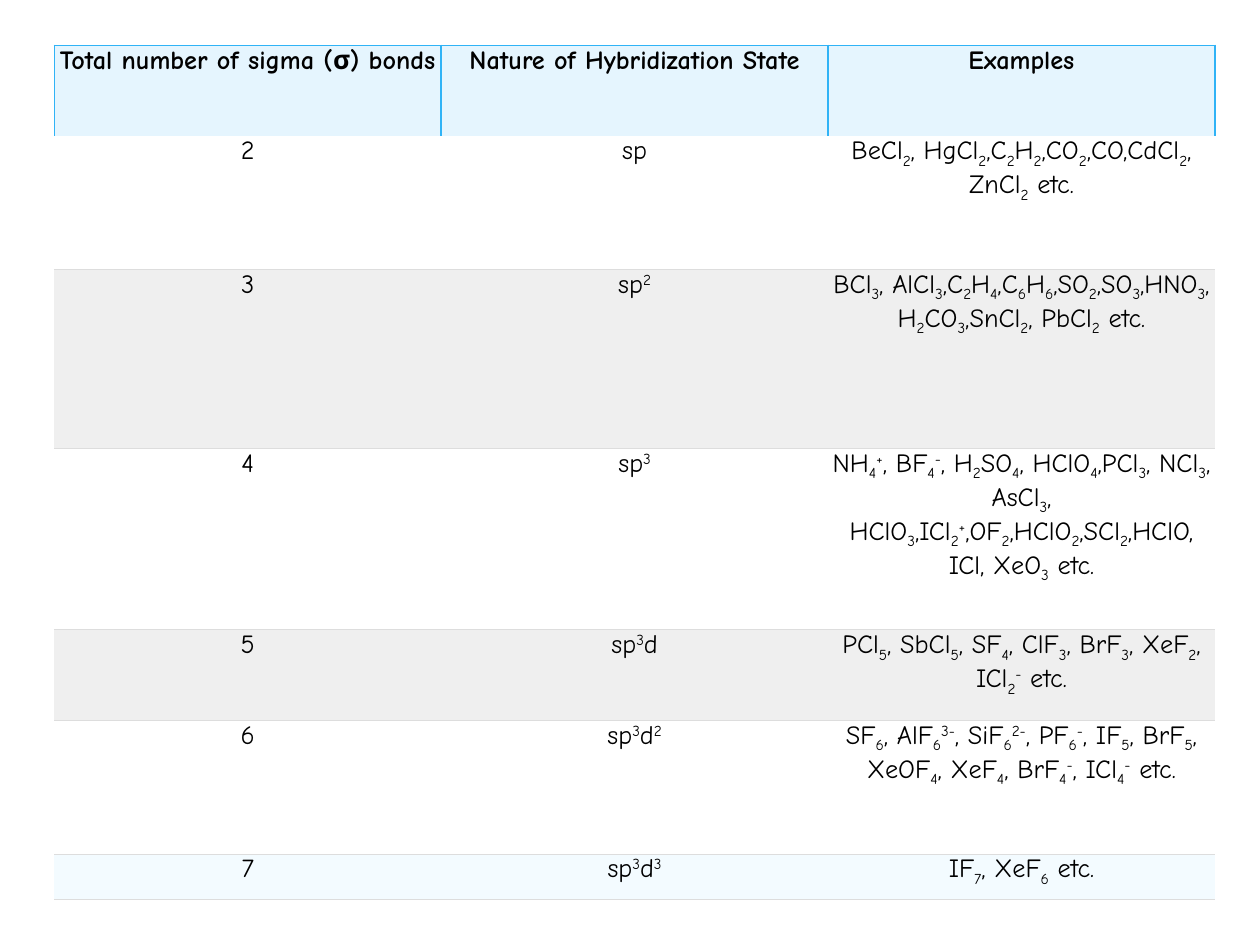
from itertools import groupby

from lxml import etree
from pptx import Presentation
from pptx import util as u
from pptx.dml import color
from pptx.enum import text
from pptx.oxml import ns

# Content: small raised and lowered characters become formatted runs
HEADER = ["Total number of sigma (σ) bonds", "Nature of Hybridization State", "Examples"]
BODY = [
    ("2", "sp", "BeCl₂, HgCl₂,C₂H₂,CO₂,CO,CdCl₂, ZnCl₂ etc."),
    ("3", "sp²", "BCl₃, AlCl₃,C₂H₄,C₆H₆,SO₂,SO₃,HNO₃,\nH₂CO₃,SnCl₂, PbCl₂ etc."),
    ("4", "sp³", "NH₄⁺, BF₄⁻, H₂SO₄, HClO₄,PCl₃, NCl₃, AsCl₃, "
                 "HClO₃,ICl₂⁺,OF₂,HClO₂,SCl₂,HClO, ICl, XeO₃ etc."),
    ("5", "sp³d", "PCl₅, SbCl₅, SF₄, ClF₃, BrF₃, XeF₂, ICl₂⁻ etc."),
    ("6", "sp³d²", "SF₆, AlF₆³⁻, SiF₆²⁻, PF₆⁻, IF₅, BrF₅, XeOF₄, XeF₄, BrF₄⁻, ICl₄⁻ etc."),
    ("7", "sp³d³", "IF₇, XeF₆ etc."),
]

# Format
LEFT, TOP, COLUMN_WIDTH = 31, 26, 221.1
ROW_HEIGHTS = [51.8, 76.3, 102.2, 103.7, 51.8, 76.3, 25.9]
FILLS = ["E5F5FE", "FFFFFF", "EFEFEF", "FFFFFF", "EFEFEF", "FFFFFF", "F3FBFF"]
FONT = {"name": "Comic Neue", "size": u.Pt(15)}
MARGINS = ("margin_left", "margin_top", "margin_right", "margin_bottom")
BLUE_LINE, GREY_LINE = ("30B3F6", 1), ("DDDDDD", 0.6)
HEADER_BORDERS = {"L": BLUE_LINE, "R": BLUE_LINE, "T": BLUE_LINE}
SUBSCRIPTS = dict(zip("₀₁₂₃₄₅₆₇₈₉", "0123456789"))
SUPERSCRIPTS = dict(zip("⁰¹²³⁴⁵⁶⁷⁸⁹⁺⁻", "0123456789+-"))


def rgb(value):
    return color.RGBColor.from_string(value)


def baseline(char):
    return -25000 if char in SUBSCRIPTS else 30000 if char in SUPERSCRIPTS else 0


def add_formula(para, formula, bold):
    plain = {**SUBSCRIPTS, **SUPERSCRIPTS}
    for shift, chars in groupby(formula, baseline):
        span = para.add_run()
        span.text = "".join(plain.get(char, char) for char in chars)
        for name, value in {**FONT, "bold": bold}.items():
            setattr(span.font, name, value)
        span.font.color.rgb = rgb("000000")
        if shift:
            span.font._element.set("baseline", str(shift))


def set_borders(cell, borders):
    properties = cell._tc.get_or_add_tcPr()
    for index, side in enumerate("LRTB"):
        line = etree.Element(ns.qn(f"a:ln{side}"))
        properties.insert(index, line)
        if side in borders:
            value, width = borders[side]
            line.set("w", str(u.Pt(width)))
            fill = etree.SubElement(line, ns.qn("a:solidFill"))
            etree.SubElement(fill, ns.qn("a:srgbClr"), val=value)
        else:
            etree.SubElement(line, ns.qn("a:noFill"))


def fill_cell(cell, content, fill, borders, bold):
    for margin in MARGINS:
        setattr(cell, margin, 0)
    cell.fill.solid()
    cell.fill.fore_color.rgb = rgb(fill)
    set_borders(cell, borders)
    frame = cell.text_frame
    for index, line in enumerate(content.split("\n")):
        para = frame.add_paragraph() if index else frame.paragraphs[0]
        para.alignment = text.PP_ALIGN.CENTER
        add_formula(para, line, bold)


deck = Presentation()
deck.slide_width, deck.slide_height = u.Pt(720), u.Pt(540)
page = deck.slides.add_slide(deck.slide_layouts[6])

# Hybridization table
rows = [HEADER, *BODY]
table = page.shapes.add_table(
    len(rows), len(HEADER), u.Pt(LEFT), u.Pt(TOP),
    u.Pt(COLUMN_WIDTH * len(HEADER)), u.Pt(sum(ROW_HEIGHTS))).table
table.horz_banding = False
for column in table.columns:
    column.width = u.Pt(COLUMN_WIDTH)

for number, (contents, height, fill) in enumerate(zip(rows, ROW_HEIGHTS, FILLS)):
    table.rows[number].height = u.Pt(height)
    borders = {"B": GREY_LINE}
    if number == 0:
        borders = HEADER_BORDERS
    elif number > 1:
        borders["T"] = GREY_LINE
    for cell, content in zip(table.rows[number].cells, contents):
        fill_cell(cell, content, fill, borders, bold=number == 0)

deck.save("out.pptx")
